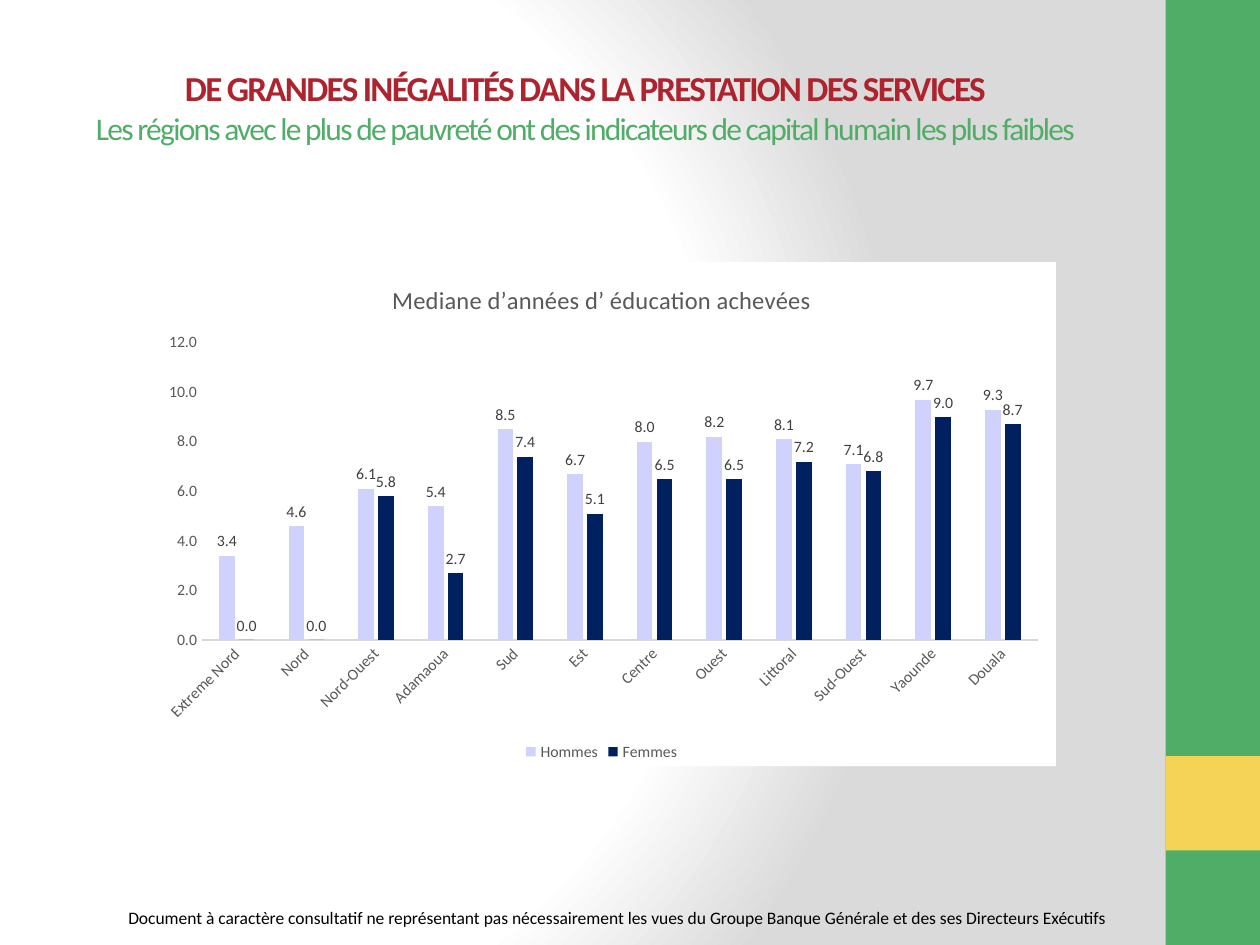
from lxml import etree
from pptx import Presentation
from pptx.chart.data import CategoryChartData
from pptx.dml.color import RGBColor
from pptx.enum.chart import XL_CHART_TYPE as ChartType
from pptx.enum.chart import XL_LABEL_POSITION as LabelPosition
from pptx.enum.chart import XL_LEGEND_POSITION as LegendPosition
from pptx.enum.chart import XL_TICK_MARK as TickMark
from pptx.enum.shapes import MSO_SHAPE as Preset
from pptx.enum.text import MSO_ANCHOR as Anchor
from pptx.enum.text import PP_ALIGN as Align
from pptx.oxml import parse_xml
from pptx.oxml.ns import nsdecls, qn
from pptx.util import Inches, Pt

GREEN, YELLOW, RED = "50AD68", "F4D356", "AD242F"
GREY, LABEL_GREY = "595959", "404040"
REGIONS = ["Extreme Nord", "Nord", "Nord-Ouest", "Adamaoua", "Sud", "Est",
           "Centre", "Ouest", "Littoral", "Sud-Ouest", "Yaounde", "Douala"]
SERIES = [
    ("Hommes", "D0D1FD", [3.4, 4.6, 6.1, 5.4, 8.5, 6.7, 8, 8.2, 8.1, 7.1, 9.7, 9.3]),
    ("Femmes", "002060", [0, 0, 5.8, 2.7, 7.4, 5.1, 6.5, 6.5, 7.2, 6.8, 9, 8.7]),
]


def color(value):
    return RGBColor.from_string(value)


def format_font(font, size, value, bold=False):
    font.name = "Calibri"
    font.size = Pt(size)
    font.bold = bold
    font.color.rgb = color(value)


def add_text(paragraph, text, size=10, value="000000", bold=False, align=Align.LEFT, spacing=0):
    """Add one run; spacing is the gap between letters in points."""
    paragraph.alignment = align
    run = paragraph.add_run()
    run.text = text
    format_font(run.font, size, value, bold)
    if spacing:
        run.font._element.set("spc", str(spacing * 100))


def set_background(slide):
    """Fill the background with a circular gradient from white to grey."""
    slide.background.fill.gradient()
    gradient = slide.element.find(".//" + qn("a:gradFill"))
    stops = "".join(
        f'<a:gs pos="{position * 1000}"><a:srgbClr val="{value}"/></a:gs>'
        for position, value in [(0, "FFFFFF"), (75, "FFFFFF"), (100, "DADADA")])
    gradient.getparent().replace(gradient, parse_xml(
        f'<a:gradFill {nsdecls("a")} rotWithShape="1"><a:gsLst>{stops}</a:gsLst>'
        '<a:path path="circle"><a:fillToRect l="20000" t="50000" r="100000" b="50000"/>'
        '</a:path></a:gradFill>'))


def add_block(slide, top, height, value):
    shape = slide.shapes.add_shape(
        Preset.RECTANGLE, Inches(9.25), Inches(top), Inches(0.75), Inches(height))
    shape.shadow.inherit = False
    shape.fill.solid()
    shape.fill.fore_color.rgb = color(value)
    shape.line.fill.background()


def set_title(slide):
    title = slide.shapes.title
    title.left, title.top = Inches(0.48), Inches(0.16)
    title.width, title.height = Inches(8.33), Inches(1.25)
    frame = title.text_frame
    frame.word_wrap = True
    frame.vertical_anchor = Anchor.MIDDLE
    frame.margin_top = Inches(0.17)
    add_text(frame.paragraphs[0], "DE GRANDES INÉGALITÉS DANS LA PRESTATION DES SERVICES",
             size=20, value=RED, bold=True, align=Align.CENTER, spacing=-1)
    add_text(frame.add_paragraph(),
             "Les régions avec le plus de pauvreté ont des indicateurs de capital humain "
             "les plus faibles",
             size=18, value=GREEN, align=Align.CENTER, spacing=-1)
    for paragraph in frame.paragraphs:
        paragraph.space_before = Pt(0)


def add_disclaimer(slide):
    box = slide.shapes.add_textbox(Inches(0.92), Inches(7.15), Inches(8.83), Inches(0.27))
    box.text_frame.word_wrap = True
    add_text(box.text_frame.paragraphs[0],
             "Document à caractère consultatif ne représentant pas nécessairement les vues du "
             "Groupe Banque Générale et des ses Directeurs Exécutifs")


def format_axis(axis):
    axis.major_tick_mark = axis.minor_tick_mark = TickMark.NONE
    axis.has_major_gridlines = False
    format_font(axis.tick_labels.font, 9, GREY)


def format_series(series, value):
    series.format.fill.solid()
    series.format.fill.fore_color.rgb = color(value)
    series.invert_if_negative = False
    labels = series.data_labels
    labels.show_value = True
    labels.number_format, labels.number_format_is_linked = "0.0", False
    labels.position = LabelPosition.OUTSIDE_END
    format_font(labels.font, 9, LABEL_GREY)


def set_plot_area(chart, **place):
    """Place the inner plot area by x, y, w and h as fractions of the chart."""
    plot_area = chart._chartSpace.chart.plotArea
    for layout in plot_area.findall(qn("c:layout")):
        plot_area.remove(layout)
    layout = etree.Element(qn("c:layout"))
    manual = etree.SubElement(layout, qn("c:manualLayout"))
    settings = {"layoutTarget": "inner", "xMode": "edge", "yMode": "edge", **place}
    for name, setting in settings.items():
        etree.SubElement(manual, qn("c:" + name)).set("val", str(setting))
    plot_area.insert(0, layout)


def add_education_chart(slide):
    data = CategoryChartData(number_format="0.0")
    data.categories = REGIONS
    for name, _, values in SERIES:
        data.add_series(name, values)
    chart = slide.shapes.add_chart(
        ChartType.COLUMN_CLUSTERED, Inches(1.17), Inches(2.08), Inches(7.21), Inches(4),
        data).chart
    format_font(chart.font, 10, "000000")
    chart._chartSpace.chart.addnext(parse_xml(
        f'<c:spPr {nsdecls("c", "a")}><a:solidFill><a:srgbClr val="FFFFFF"/></a:solidFill>'
        '<a:ln><a:noFill/></a:ln></c:spPr>'))

    chart.has_title = True
    add_text(chart.chart_title.text_frame.paragraphs[0],
             "Mediane d’années d’ éducation achevées", size=14, value=GREY, align=Align.CENTER)
    chart.chart_title.include_in_layout = False
    chart.has_legend = True
    chart.legend.position = LegendPosition.BOTTOM
    chart.legend.include_in_layout = False
    format_font(chart.legend.font, 9, GREY)

    format_axis(chart.category_axis)
    chart.category_axis.format.line.color.rgb = color("D9D9D9")
    chart.category_axis.format.line.width = Pt(0.75)
    chart.category_axis.tick_labels.font._element.getroottree()
    body = chart.category_axis._element.find(qn("c:txPr")).find(qn("a:bodyPr"))
    body.set("rot", str(-45 * 60000))
    axis = chart.value_axis
    format_axis(axis)
    axis.format.line.fill.background()
    axis.minimum_scale, axis.maximum_scale, axis.major_unit = 0, 12, 2
    axis.tick_labels.number_format = "0.0"
    axis.tick_labels.number_format_is_linked = False

    plot = chart.plots[0]
    plot.gap_width, plot.overlap = 219, -27
    plot.vary_by_categories = False
    for series, (_, value, _) in zip(plot.series, SERIES):
        format_series(series, value)
    set_plot_area(chart, x=0.06, y=0.16, w=0.92, h=0.59)


def main():
    presentation = Presentation()
    presentation.slide_width, presentation.slide_height = Inches(10), Inches(7.5)
    slide = presentation.slides.add_slide(presentation.slide_layouts[5])
    set_background(slide)
    add_block(slide, 0, 7.5, GREEN)
    add_block(slide, 6, 0.75, YELLOW)
    add_disclaimer(slide)
    set_title(slide)
    add_education_chart(slide)
    presentation.save("out.pptx")


if __name__ == "__main__":
    main()
